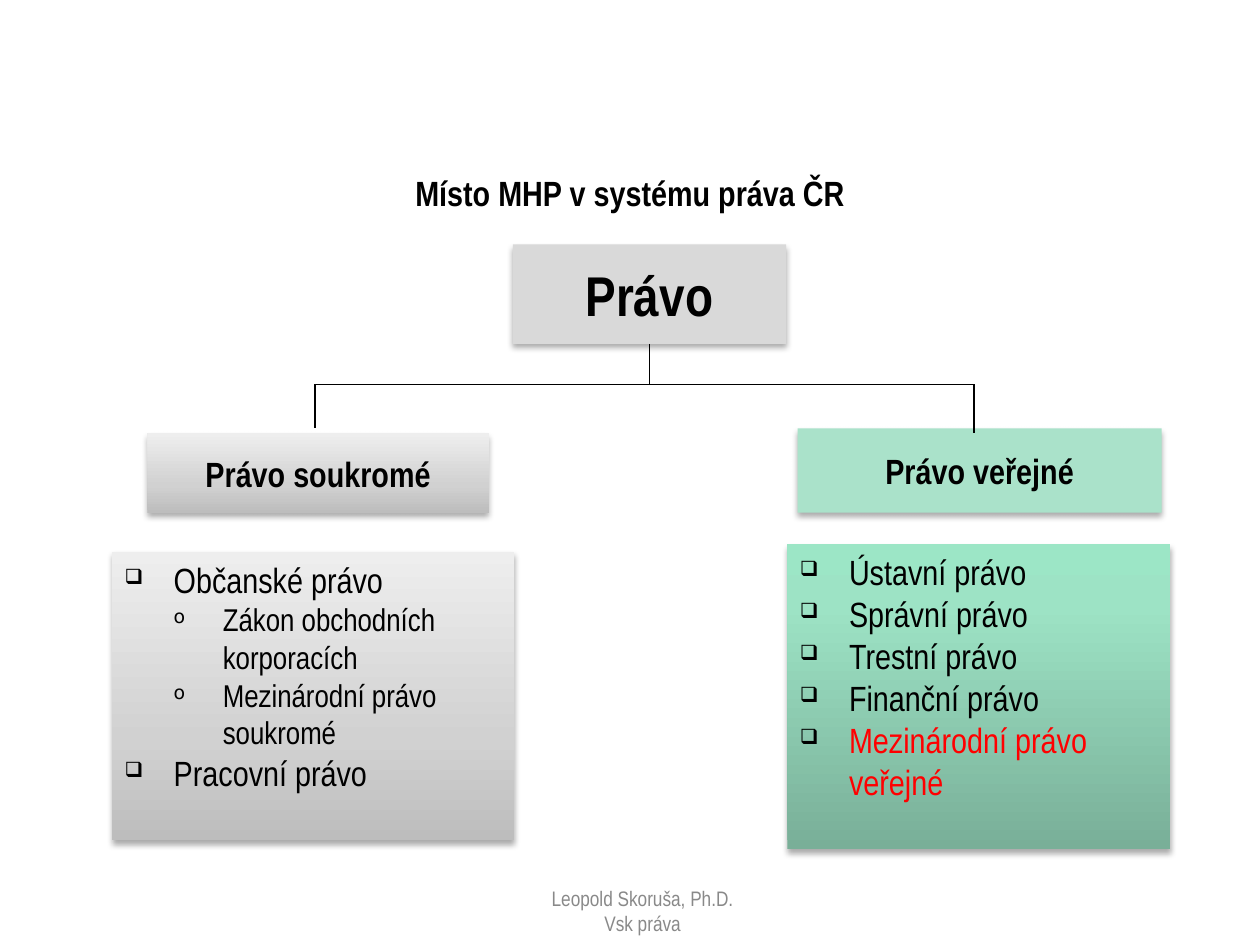
from dataclasses import dataclass

from lxml.etree import SubElement
from pptx import Presentation
from pptx.dml.color import RGBColor
from pptx.enum.shapes import MSO_CONNECTOR, MSO_SHAPE
from pptx.enum.text import MSO_ANCHOR, MSO_AUTO_SIZE, PP_ALIGN
from pptx.oxml.ns import qn
from pptx.util import Inches, Pt


@dataclass(frozen=True)
class Theme:
    font: str = "Arial Narrow"
    ink: str = "000000"
    accent: str = "FF0000"
    muted: str = "898989"
    root: str = "D9D9D9"
    public: str = "AAE2CA"
    private_fade: tuple = ((0, "BDBDBD"), (35, "D1D1D1"), (100, "EEEEEE"))
    public_fade: tuple = ((0, "79AF98"), (80, "9DE3C5"), (100, "9CE6C6"))
    root_size: int = 32
    heading: int = 20
    detail: int = 18
    footer: int = 12
    line: float = 0.75
    step: float = 0.39


THEME = Theme()
HEADING_INSETS = (0.08, 0.04, 0.08, 0.04)
BODY_INSETS = (0.1, 0.05, 0.1, 0.05)


def apply(target, values):
    for name, value in values.items():
        setattr(target, name, value)


def inches(box):
    return [Inches(value) for value in box]


def write(paragraph, text, size, color=THEME.ink, bold=False):
    run = paragraph.add_run()
    run.text = text
    apply(run.font, {"name": THEME.font, "size": Pt(size), "bold": bold})
    run.font.color.rgb = RGBColor.from_string(color)


def format_frame(frame, insets=BODY_INSETS, **values):
    sides = ("margin_left", "margin_top", "margin_right", "margin_bottom")
    apply(frame, dict(zip(sides, inches(insets))))
    apply(frame, values)


def add_fade(fill, stops):
    fill.gradient()
    fill.gradient_angle = 90
    stop_list = fill._xPr.find(f".//{qn('a:gsLst')}")
    stop_list.clear()
    for position, color in stops:
        stop = SubElement(stop_list, qn("a:gs"), pos=str(position * 1000))
        SubElement(stop, qn("a:srgbClr"), val=color)


def add_panel(slide, box, paint):
    panel = slide.shapes.add_shape(MSO_SHAPE.RECTANGLE, *inches(box))
    panel.line.fill.background()
    if isinstance(paint, str):
        panel.fill.solid()
        panel.fill.fore_color.rgb = RGBColor.from_string(paint)
    else:
        add_fade(panel.fill, paint)
    panel.shadow.inherit = False
    effects = panel._element.spPr.find(qn("a:effectLst"))
    shadow = SubElement(effects, qn("a:outerShdw"), blurRad=str(Pt(3.5)),
                        dist=str(Pt(2.2)), dir="5400000", rotWithShape="0")
    shade = SubElement(shadow, qn("a:srgbClr"), val=THEME.ink)
    SubElement(shade, qn("a:alpha"), val="32000")
    return panel


def add_branch(slide, box, text, size, paint):
    branch = add_panel(slide, box, paint)
    format_frame(branch.text_frame, HEADING_INSETS, word_wrap=False,
                 vertical_anchor=MSO_ANCHOR.MIDDLE)
    paragraph = branch.text_frame.paragraphs[0]
    paragraph.alignment = PP_ALIGN.CENTER
    write(paragraph, text, size, bold=True)
    return branch


def add_bullet(paragraph, level):
    indent = Inches(THEME.step)
    properties = paragraph._p.get_or_add_pPr()
    properties.set("marL", str(indent * (level + 1)))
    properties.set("indent", str(-indent))
    color = SubElement(properties, qn("a:buClr"))
    SubElement(color, qn("a:srgbClr"), val=THEME.ink)
    SubElement(properties, qn("a:buSzPct"), val="60000")
    SubElement(properties, qn("a:buChar"), char="❑o"[level])


def add_fields(slide, box, fields, paint):
    frame = add_panel(slide, box, paint).text_frame
    format_frame(frame, word_wrap=True, vertical_anchor=MSO_ANCHOR.TOP,
                 auto_size=MSO_AUTO_SIZE.SHAPE_TO_FIT_TEXT)
    for index, (text, level, color) in enumerate(fields):
        paragraph = frame.add_paragraph() if index else frame.paragraphs[0]
        apply(paragraph, {"level": level, "alignment": PP_ALIGN.LEFT})
        add_bullet(paragraph, level)
        write(paragraph, text, (THEME.heading, THEME.detail)[level], color)


def add_caption(slide, box, lines, size, color, bold, anchor, space_after=0):
    frame = slide.shapes.add_textbox(*inches(box)).text_frame
    format_frame(frame, word_wrap=True, vertical_anchor=anchor)
    for index, text in enumerate(lines):
        paragraph = frame.add_paragraph() if index else frame.paragraphs[0]
        apply(paragraph, {"alignment": PP_ALIGN.CENTER, "space_after": Pt(space_after)})
        write(paragraph, text, size, color, bold)


def add_link(slide, start, end):
    link = slide.shapes.add_connector(MSO_CONNECTOR.STRAIGHT, *inches(start + end))
    link.line.width = Pt(THEME.line)
    link.line.color.rgb = RGBColor.from_string(THEME.ink)
    SubElement(link._element.spPr, qn("a:effectLst"))
    return link


def add_tree_lines(slide, box, root, right_overlap):
    left, top, width, height = box
    right, bottom = left + width, top + height
    center = (root.left + root.width / 2) / Inches(1)
    add_link(slide, (left, top), (right, top))
    add_link(slide, (left, top), (left, bottom))
    stem = add_link(slide, (center, 2.73), (center, top))
    stem.begin_connect(root, 2)
    add_link(slide, (right, top), (right, bottom + right_overlap))


def build_slide(slide):
    root = add_branch(slide, (4.07, 1.94, 2.17, 0.79), "Právo",
                      THEME.root_size, THEME.root)
    add_branch(slide, (1.17, 3.44, 2.71, 0.63), "Právo soukromé",
               THEME.heading, THEME.private_fade)
    add_branch(slide, (6.33, 3.4, 2.89, 0.67), "Právo veřejné",
               THEME.heading, THEME.public)
    add_tree_lines(slide, (2.5, 3.05, 5.23, 0.35), root, 0.04)

    private_fields = [
        ("Občanské právo", 0, THEME.ink),
        ("Zákon obchodních korporacích", 1, THEME.ink),
        ("Mezinárodní právo soukromé", 1, THEME.ink),
        ("Pracovní právo", 0, THEME.ink),
    ]
    public_fields = [(f"{name} právo", 0, THEME.ink)
                     for name in ("Ústavní", "Správní", "Trestní", "Finanční")]
    public_fields.append(("Mezinárodní právo veřejné", 0, THEME.accent))
    add_fields(slide, (0.89, 4.38, 3.19, 2.29), private_fields, THEME.private_fade)
    add_fields(slide, (6.25, 4.32, 3.04, 2.42), public_fields, THEME.public_fade)

    add_caption(slide, (1.85, 1.31, 6.3, 0.44), ["Místo MHP v systému práva ČR"],
                THEME.heading, THEME.ink, True, MSO_ANCHOR.TOP, space_after=18)
    add_caption(slide, (3.31, 6.95, 3.58, 0.55), ["Leopold Skoruša, Ph.D.", "Vsk práva"],
                THEME.footer, THEME.muted, False, MSO_ANCHOR.MIDDLE)


def main():
    presentation = Presentation()
    apply(presentation, {"slide_width": Inches(10), "slide_height": Inches(7.5)})
    build_slide(presentation.slides.add_slide(presentation.slide_layouts[6]))
    presentation.save("out.pptx")


if __name__ == "__main__":
    main()
